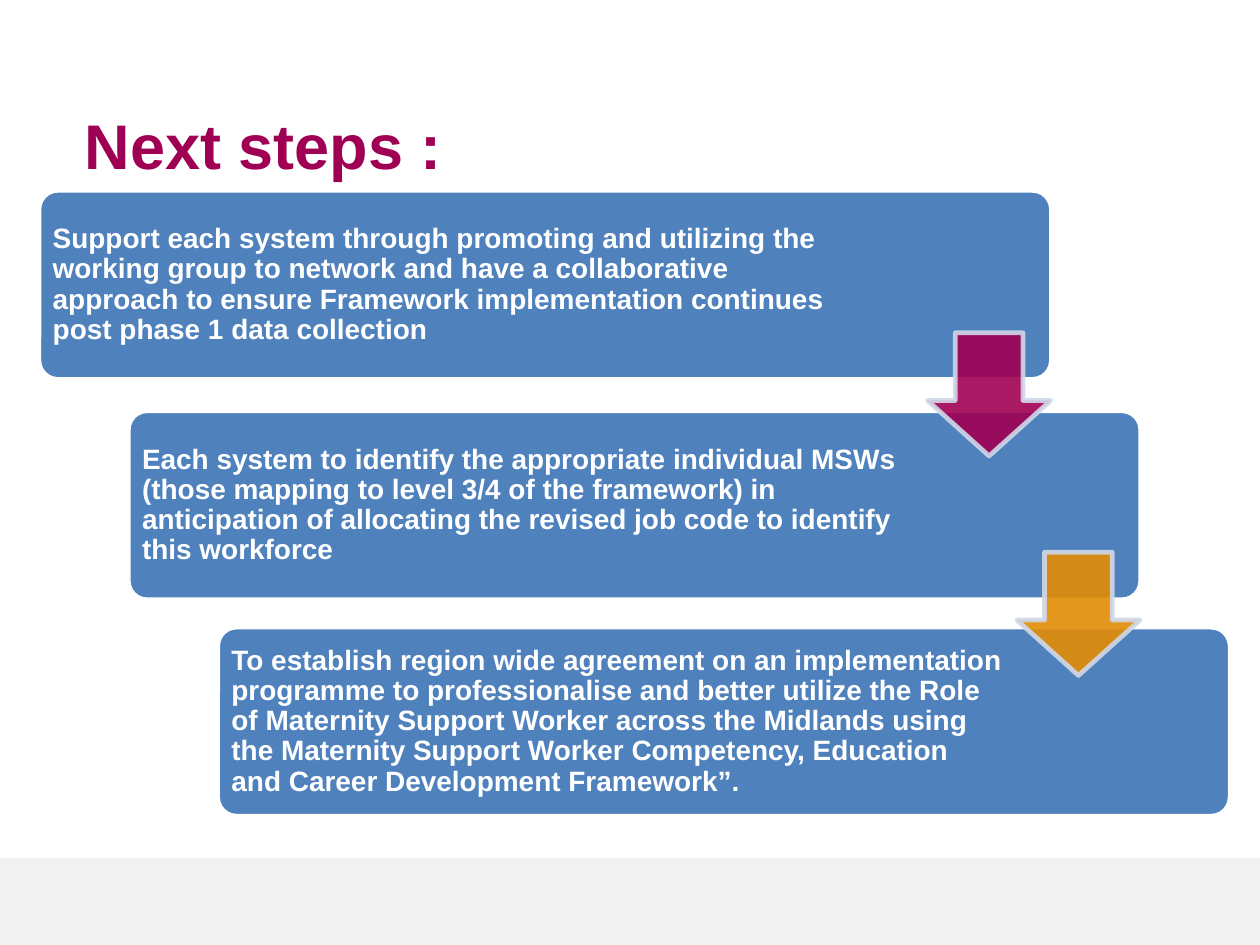
from dataclasses import dataclass

from lxml.etree import SubElement
from pptx import Presentation
from pptx.dml.color import RGBColor
from pptx.enum.shapes import MSO_SHAPE as Shape
from pptx.enum.text import MSO_ANCHOR as Anchor
from pptx.oxml.ns import qn
from pptx.util import Pt


@dataclass(frozen=True)
class Theme:
    font: str = "Arial"
    title_size: float = 27
    step_size: float = 12
    line_width: float = 2
    plum: str = "A00054"
    orange: str = "E28C05"
    blue: str = "4F81BD"
    arrow_line: str = "D0D8E8"
    footer: str = "F2F2F2"
    white: str = "FFFFFF"


theme = Theme()
presentation = Presentation()
presentation.slide_width, presentation.slide_height = Pt(540), Pt(405)
slide = presentation.slides.add_slide(presentation.slide_layouts[6])


def add_block(kind, left, top, width, height, fill, line=None, opacity=100):
    shape = slide.shapes.add_shape(kind, Pt(left), Pt(top), Pt(width), Pt(height))
    shape.shadow.inherit = False
    shape.fill.solid()
    shape.fill.fore_color.rgb = RGBColor.from_string(fill)
    if line:
        shape.line.color.rgb = RGBColor.from_string(line)
        shape.line.width = Pt(theme.line_width)
    else:
        shape.line.fill.background()
    if opacity < 100:
        for color in shape.element.spPr.iter(qn("a:srgbClr")):
            SubElement(color, qn("a:alpha"), val=str(opacity * 1000))
    return shape


def add_text(text, left, top, width, height, size, color, anchor, inset_x, inset_y):
    box = slide.shapes.add_textbox(Pt(left), Pt(top), Pt(width), Pt(height))
    frame = box.text_frame
    frame.word_wrap = True
    frame.vertical_anchor = anchor
    frame.margin_left = frame.margin_right = Pt(inset_x)
    frame.margin_top = frame.margin_bottom = Pt(inset_y)
    paragraph = frame.paragraphs[0]
    run = paragraph.add_run()
    run.text = text
    run.font.name = theme.font
    run.font.size = Pt(size)
    run.font.bold = True
    run.font.color.rgb = RGBColor.from_string(color)
    return paragraph


# Footer band and title
add_block(Shape.RECTANGLE, 0, 367.7, 540, 37.3, theme.footer)
add_text("Next steps :", 31, 40.3, 459.4, 40.3, theme.title_size, theme.plum,
         Anchor.BOTTOM, 5.4, 2.7)

# Staircase of steps: top, text width, wording
steps = [
    (81.6, 346.3, "Support each system through promoting and utilizing the working group "
     "to network and have a collaborative approach to ensure Framework implementation "
     "continues post phase 1 data collection"),
    (176.1, 338.4, "Each system to identify the appropriate individual MSWs (those mapping "
     "to level 3/4 of the framework) in anticipation of allocating the revised job code "
     "to identify this workforce"),
    (268.8, 338.4, "To establish region wide agreement on an implementation programme to "
     "professionalise and better utilize the Role of Maternity Support Worker across the "
     "Midlands using the Maternity Support Worker Competency, Education and Career "
     "Development Framework”."),
]
first_left, step_indent = 16.7, 38.3
step_width, step_height, text_gap = 433.9, 81, 2.3
for index, (top, text_width, text) in enumerate(steps):
    left = first_left + index * step_indent
    card = add_block(Shape.ROUNDED_RECTANGLE, left, top, step_width, step_height,
                     theme.blue, theme.white)
    card.adjustments[0] = 0.1
    paragraph = add_text(text, left + text_gap, top + text_gap, text_width,
                         step_height - 2 * text_gap, theme.step_size, theme.white,
                         Anchor.MIDDLE, 3.6, 3.6)
    paragraph.line_spacing = 0.9

# Arrows leading from each step to the next
arrow_size = 52.8
for index, color in enumerate([theme.plum, theme.orange]):
    arrow = add_block(Shape.DOWN_ARROW, 397.5 + index * step_indent, 142.6 + index * 94.1,
                      arrow_size, arrow_size, color, theme.arrow_line, opacity=90)
    arrow.adjustments[0] = 0.55
    arrow.adjustments[1] = 0.45

presentation.save("out.pptx")
